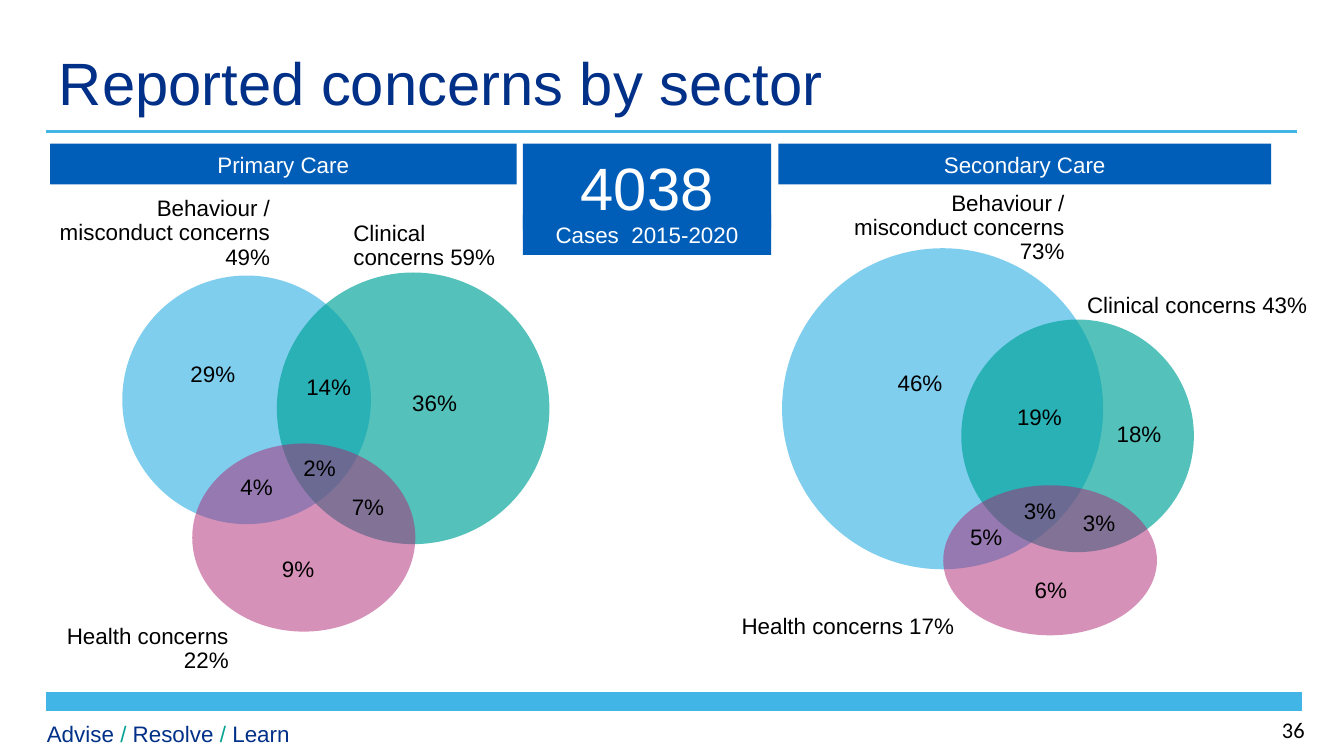
from lxml.etree import SubElement
from pptx import Presentation
from pptx.dml.color import RGBColor
from pptx.enum.shapes import MSO_CONNECTOR, MSO_SHAPE
from pptx.enum.text import MSO_ANCHOR, PP_ALIGN
from pptx.oxml.ns import qn
from pptx.util import Pt

NAVY = RGBColor(0x00, 0x30, 0x87)
BLUE = RGBColor(0x00, 0x5E, 0xB8)
SKY = RGBColor(0x41, 0xB6, 0xE6)
TEAL = RGBColor(0x00, 0xA4, 0x99)
SLASH_TEAL = RGBColor(0x00, 0xA2, 0x91)
PLUM = RGBColor(0xAE, 0x25, 0x73)
BLACK = RGBColor(0x00, 0x00, 0x00)
WHITE = RGBColor(0xFF, 0xFF, 0xFF)

presentation = Presentation()
presentation.slide_width = Pt(720)
presentation.slide_height = Pt(405)
slide = presentation.slides.add_slide(presentation.slide_layouts[6])


def add_text(box, text, size=12, color=BLACK, align=PP_ALIGN.LEFT, font="Arial", spacing=1.0):
    left, top, width, height = box
    shape = slide.shapes.add_textbox(Pt(left), Pt(top), Pt(width), Pt(height))
    frame = shape.text_frame
    frame.word_wrap = True
    paragraph = frame.paragraphs[0]
    paragraph.text = text
    paragraph.alignment = align
    paragraph.line_spacing = spacing
    paragraph.font.size = Pt(size)
    paragraph.font.name = font
    paragraph.font.color.rgb = color
    return shape


def add_banner(shapes, box, text, size=12):
    left, top, width, height = box
    shape = shapes.add_shape(MSO_SHAPE.RECTANGLE, Pt(left), Pt(top), Pt(width), Pt(height))
    shape.shadow.inherit = False
    shape.fill.solid()
    shape.fill.fore_color.rgb = BLUE
    shape.line.fill.background()
    shape.text_frame.word_wrap = True
    paragraph = shape.text_frame.paragraphs[0]
    paragraph.text = text
    paragraph.alignment = PP_ALIGN.CENTER
    paragraph.font.size = Pt(size)
    paragraph.font.name = "Arial"
    paragraph.font.color.rgb = WHITE


for start, end, top, weight in [(24.5, 695, 70.5, 2), (24.5, 697.5, 376, 10)]:
    rule = slide.shapes.add_connector(MSO_CONNECTOR.STRAIGHT, Pt(start), Pt(top), Pt(end), Pt(top))
    rule.line.color.rgb = SKY
    rule.line.width = Pt(weight)
    SubElement(rule._element.spPr, qn("a:effectLst"))

title = add_text((24.5, 23.8, 545, 39.6), "Reported concerns by sector", 32, NAVY)
title.text_frame.vertical_anchor = MSO_ANCHOR.MIDDLE

footer = add_text((18, 382.3, 178.6, 21.6), "", color=NAVY)
for text, color in [("Advise ", NAVY), ("/", SLASH_TEAL), (" Resolve ", NAVY),
                    ("/", SLASH_TEAL), (" Learn", NAVY)]:
    run = footer.text_frame.paragraphs[0].add_run()
    run.text = text
    run.font.size = Pt(12)
    run.font.name = "Arial"
    run.font.color.rgb = color
add_text((679.7, 380.2, 39.6, 21.6), "36", font="Calibri")

circles = [
    (65.5, 147.6, 133.2, 133.2, SKY, 67),
    (148.3, 146, 146, 145.5, TEAL, 67),
    (103, 237.6, 119.5, 100.8, PLUM, 50),
    (419, 133, 172, 172, SKY, 67),
    (515, 171.2, 124.6, 124.6, TEAL, 67),
    (505.3, 260, 114.5, 80.4, PLUM, 50),
]
for left, top, width, height, color, opacity in circles:
    circle = slide.shapes.add_shape(MSO_SHAPE.OVAL, Pt(left), Pt(top), Pt(width), Pt(height))
    circle.shadow.inherit = False
    circle.fill.solid()
    circle.fill.fore_color.rgb = color
    circle.line.fill.background()
    color_element = circle._element.spPr.find(qn("a:solidFill")).find(qn("a:srgbClr"))
    SubElement(color_element, qn("a:alpha"), val=str(opacity * 1000))

concerns = [
    ((15.8, 102.2, 136, 51.8), "Behaviour / misconduct concerns 49%", PP_ALIGN.RIGHT),
    ((182.2, 115.2, 101.5, 34.6), "Clinical concerns 59%", PP_ALIGN.LEFT),
    ((22.3, 331.2, 107.3, 51.8), "Health concerns 22%", PP_ALIGN.RIGHT),
    ((441.4, 99.4, 136, 51.8), "Behaviour / misconduct concerns 73%", PP_ALIGN.RIGHT),
    ((575.3, 154.1, 152.6, 51.1), "Clinical concerns 43%", PP_ALIGN.LEFT),
    ((357.1, 326.2, 161.3, 77), "Health concerns 17%", PP_ALIGN.RIGHT),
]
for box, text, align in concerns:
    add_text(box, text, align=align, spacing=0.9)

shares = [
    (95, 189.4, 29), (213.8, 205.2, 36), (144, 293.8, 9), (157, 196.6, 14),
    (121.7, 249.8, 4), (181.4, 260.6, 7), (155.5, 239.8, 2),
    (473.8, 194.4, 46), (591.1, 221.8, 18), (547.2, 305.3, 6), (537.8, 212.4, 19),
    (512.6, 276.5, 5), (573.1, 269.3, 3), (541.4, 262.8, 3),
]
for left, top, share in shares:
    add_text((left, top, 55, 21.6), f"{share}%")

add_banner(slide.shapes, (26.8, 77, 250, 21.8), "Primary Care")
add_banner(slide.shapes, (417, 77, 264, 21.8), "Secondary Care")
total = slide.shapes.add_group_shape()
add_banner(total.shapes, (280.2, 77, 133, 46), "4038", 32)
add_banner(total.shapes, (280.2, 114.8, 133, 21.8), "Cases  2015-2020")

presentation.save("out.pptx")
